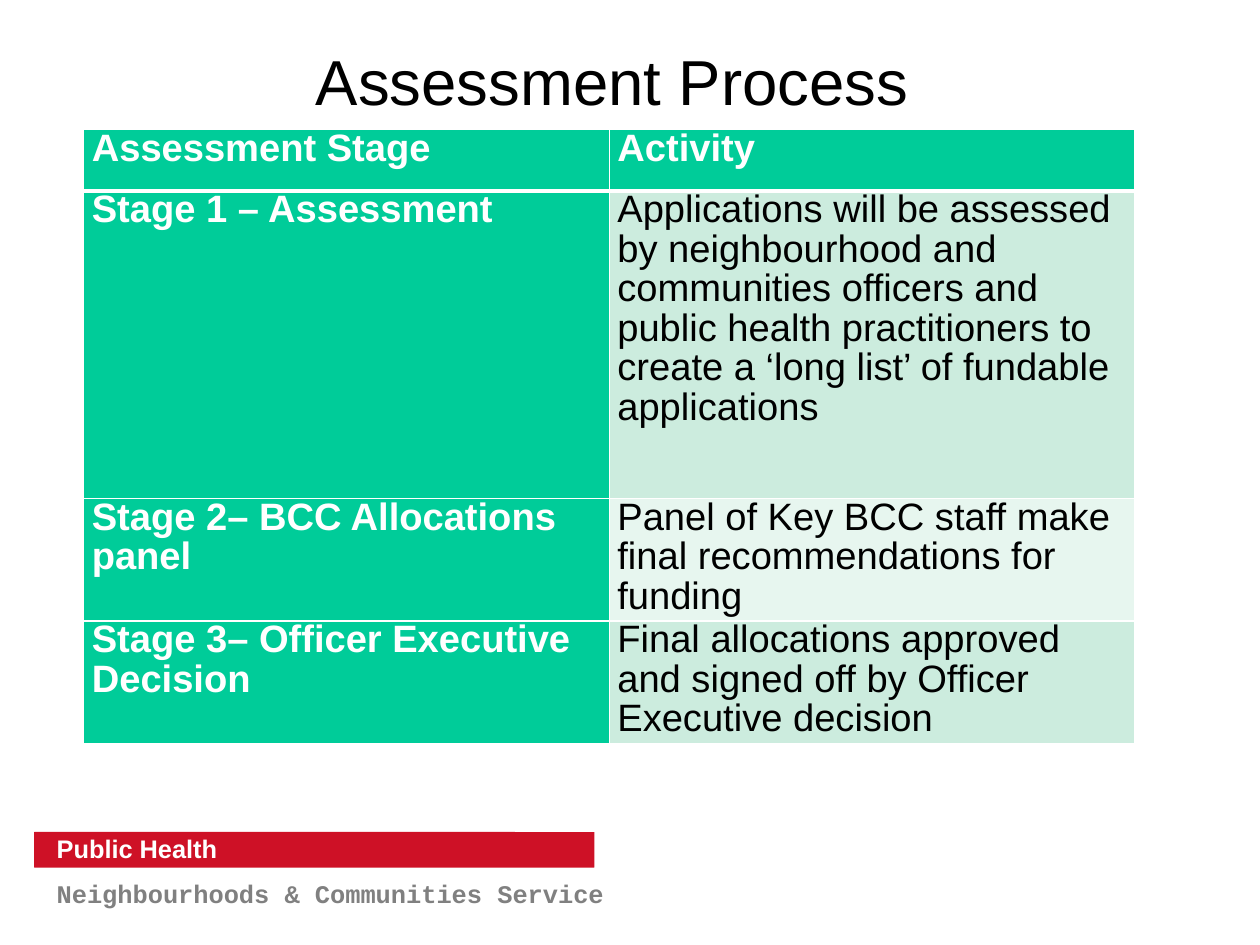
from dataclasses import dataclass

from lxml import etree
from pptx import Presentation
from pptx import util as u
from pptx.dml.color import RGBColor
from pptx.enum import shapes, text
from pptx.oxml import ns

GREEN, MINT, PALE = "00CC99", "CCECDE", "E7F6EF"
RED, GREY, WHITE, BLACK = "CE1126", "808080", "FFFFFF", "000000"


@dataclass
class Style:
    size: int
    color: str
    bold: bool = False
    font: str = "Arial"
    spacing: float = 0.93


@dataclass
class Row:
    height: float
    stage: str
    activity: str
    fill: str


HEADING = Style(24, WHITE, True)
DETAIL = Style(24, BLACK)
ROWS = [
    Row(1.37, "Assessment Stage", "Activity", GREEN),
    Row(6.83, "Stage 1 – Assessment",
        "Applications will be assessed by neighbourhood and communities officers "
        "and public health practitioners to create a ‘long list’ of fundable applications", MINT),
    Row(2.72, "Stage 2– BCC Allocations panel",
        "Panel of Key BCC staff make final recommendations for funding", PALE),
    Row(2.72, "Stage 3– Officer Executive Decision",
        "Final allocations approved and signed off by Officer Executive decision", MINT),
]


def rgb(value: str) -> RGBColor:
    return RGBColor.from_string(value)


def write(tf, words: str, style: Style, align=text.PP_ALIGN.LEFT) -> None:
    p = tf.paragraphs[0]
    p.alignment = align
    p.line_spacing = style.spacing
    r = p.add_run()
    r.text = words
    r.font.name, r.font.size, r.font.bold = style.font, u.Pt(style.size), style.bold
    r.font.color.rgb = rgb(style.color)


def set_frame(tf, left: float = 0, right: float = 0, anchor=text.MSO_ANCHOR.MIDDLE) -> None:
    tf.word_wrap = True
    tf.auto_size = text.MSO_AUTO_SIZE.NONE
    tf.vertical_anchor = anchor
    tf.margin_left, tf.margin_right = u.Cm(left), u.Cm(right)
    tf.margin_top = tf.margin_bottom = 0


def add_border(cell, side: str, width: float) -> None:
    tc_pr = cell._tc.get_or_add_tcPr()
    ln = etree.SubElement(tc_pr, ns.qn(f"a:ln{side}"), w=str(u.Pt(width)))
    fill = etree.SubElement(ln, ns.qn("a:solidFill"))
    etree.SubElement(fill, ns.qn("a:srgbClr"), val=WHITE)


def fill_cell(cell, words: str, style: Style, fill: str, top: float, bottom: float) -> None:
    cell.margin_left = cell.margin_right = u.Cm(0.18)
    cell.margin_top = cell.margin_bottom = 0
    for side, width in (("L", 1), ("R", 1), ("T", top), ("B", bottom)):
        add_border(cell, side, width)
    cell.fill.solid()
    cell.fill.fore_color.rgb = rgb(fill)
    write(cell.text_frame, words, style)


def add_footer(s) -> None:
    sp = s.shapes.add_shape(shapes.MSO_SHAPE.ROUNDED_RECTANGLE,
                            u.Cm(0.76), u.Cm(18.49), u.Cm(12.45), u.Cm(0.79))
    sp.adjustments[0] = 0.01
    sp.shadow.inherit = False
    sp.fill.solid()
    sp.fill.fore_color.rgb = rgb(RED)
    sp.line.fill.background()
    set_frame(sp.text_frame, 0.5)
    write(sp.text_frame, "Public Health", Style(16, WHITE, True))

    sp = s.shapes.add_textbox(u.Cm(0.76), u.Cm(19.51), u.Cm(13.74), u.Cm(0.99))
    set_frame(sp.text_frame, 0.5, anchor=text.MSO_ANCHOR.TOP)
    write(sp.text_frame, "Neighbourhoods & Communities Service",
          Style(16, GREY, True, "Courier New", 1.01))


def add_title(s) -> None:
    sp = s.shapes.title
    sp.left, sp.top, sp.width, sp.height = u.Cm(1.5), u.Cm(0.76), u.Cm(25), u.Cm(2.24)
    set_frame(sp.text_frame, right=0.8)
    write(sp.text_frame, "Assessment Process", Style(40, BLACK), text.PP_ALIGN.CENTER)


def add_stages(s) -> None:
    height = sum(row.height for row in ROWS)
    table = s.shapes.add_table(len(ROWS), 2, u.Cm(1.86), u.Cm(2.88),
                               u.Cm(23.36), u.Cm(height)).table
    for i, row in enumerate(ROWS):
        table.rows[i].height = u.Cm(row.height)
        top, bottom = (3 if i == 1 else 1), (3 if i == 0 else 1)
        fill_cell(table.cell(i, 0), row.stage, HEADING, GREEN, top, bottom)
        fill_cell(table.cell(i, 1), row.activity, DETAIL if i else HEADING, row.fill, top, bottom)


def main() -> None:
    prs = Presentation()
    prs.slide_width, prs.slide_height = u.Cm(28), u.Cm(21)
    s = prs.slides.add_slide(prs.slide_layouts.get_by_name("Title Only"))
    # Footer band and service name
    add_footer(s)
    # Heading and table of stages
    add_title(s)
    add_stages(s)
    prs.save("out.pptx")


if __name__ == "__main__":
    main()
